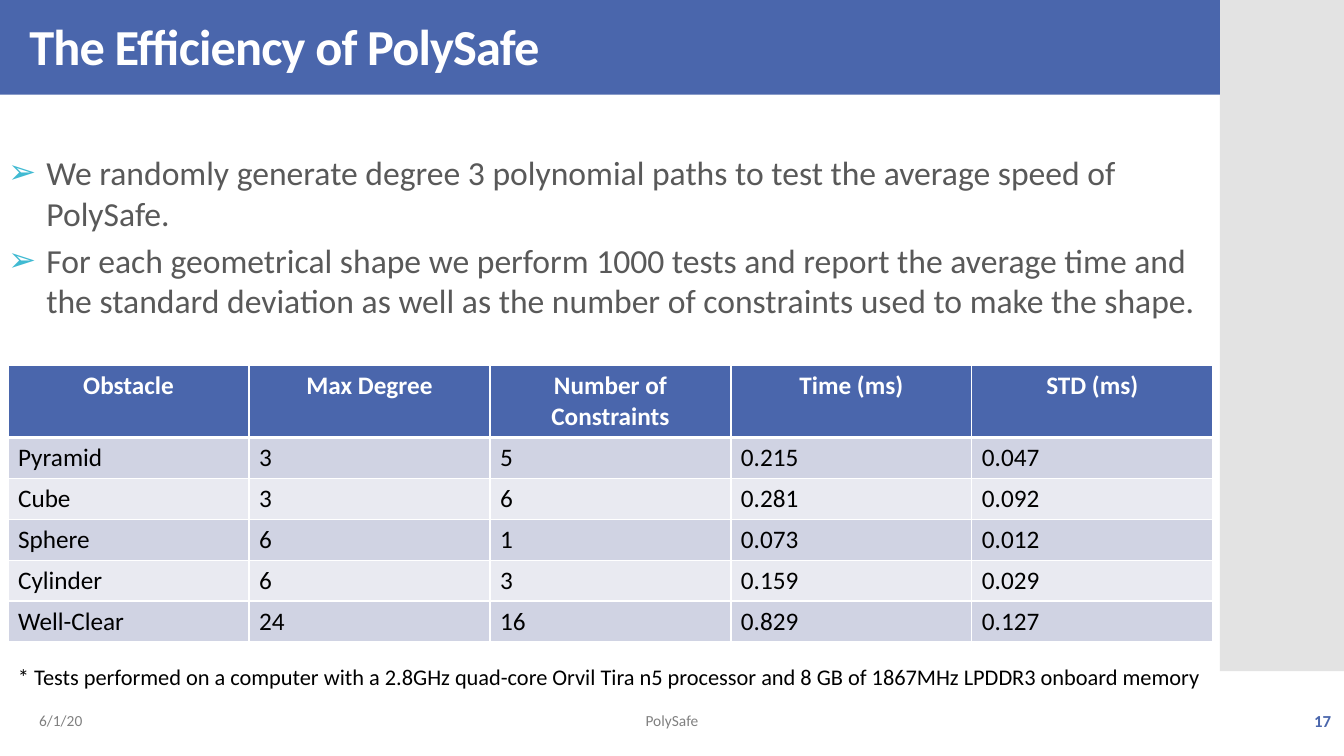
from dataclasses import dataclass

from lxml.etree import SubElement
from pptx import Presentation
from pptx.dml.color import RGBColor
from pptx.enum.shapes import MSO_SHAPE
from pptx.enum.text import MSO_ANCHOR, MSO_AUTO_SIZE, PP_ALIGN
from pptx.oxml.ns import qn
from pptx.slide import Slide
from pptx.text.text import Font, TextFrame
from pptx.util import Inches, Pt

BLUE = RGBColor(0x4A, 0x66, 0xAC)
CYAN = RGBColor(0x40, 0xBA, 0xD2)
WHITE = RGBColor(0xFF, 0xFF, 0xFF)
BLACK = RGBColor(0, 0, 0)
DARK_GREY = RGBColor(0x59, 0x59, 0x59)
GREY = RGBColor(0x80, 0x80, 0x80)
SIDE_GREY = RGBColor(0xC8, 0xC8, 0xC8)
ROW_DARK = RGBColor(0xD0, 0xD3, 0xE3)
ROW_LIGHT = RGBColor(0xE9, 0xEA, 0xF1)


@dataclass(frozen=True)
class Box:
    left: float
    top: float
    width: float
    height: float

    def emu(self) -> tuple:
        return tuple(Inches(v) for v in (self.left, self.top, self.width, self.height))


@dataclass(frozen=True)
class Panel:
    box: Box
    color: RGBColor
    opacity: int = 100


@dataclass(frozen=True)
class Label:
    text: str
    box: Box
    size: int
    color: RGBColor
    align: PP_ALIGN = PP_ALIGN.LEFT
    anchor: MSO_ANCHOR = MSO_ANCHOR.MIDDLE
    bold: bool = False


PANELS = [
    Panel(Box(-0.01, 0, 12.11, 0.94), BLUE),
    Panel(Box(12.1, 0, 1.24, 6.66), SIDE_GREY, 50),
]
BULLETS = [
    "We randomly generate degree 3 polynomial paths to test the average speed of PolySafe.",
    "For each geometrical shape we perform 1000 tests and report the average time and "
    "the standard deviation as well as the number of constraints used to make the shape.",
]
RESULTS = [
    ("Obstacle", "Max Degree", "Number of Constraints", "Time (ms)", "STD (ms)"),
    ("Pyramid", "3", "5", "0.215", "0.047"),
    ("Cube", "3", "6", "0.281", "0.092"),
    ("Sphere", "6", "1", "0.073", "0.012"),
    ("Cylinder", "6", "3", "0.159", "0.029"),
    ("Well-Clear", "24", "16", "0.829", "0.127"),
]
LABELS = [
    Label("6/1/20", Box(0.29, 6.95, 3, 0.4), 11, GREY),
    Label("PolySafe", Box(4.16, 6.95, 5.01, 0.4), 11, GREY, PP_ALIGN.CENTER),
    Label("17", Box(11.63, 6.95, 1.67, 0.4), 12, BLUE, PP_ALIGN.RIGHT, bold=True),
    Label("* Tests performed on a computer with a 2.8GHz quad-core Orvil Tira n5 processor "
          "and 8 GB of 1867MHz LPDDR3 onboard memory",
          Box(0.08, 6.53, 12.13, 0.67), 16, BLACK, anchor=MSO_ANCHOR.TOP),
]


def style_font(font: Font, size: float, color: RGBColor, bold: bool = False) -> None:
    font.name = "Calibri"
    font.size = Pt(size)
    font.bold = bold
    font.color.rgb = color


def prepare_placeholder(sp, box: Box) -> TextFrame:
    """Move a placeholder and give its frame the slide's insets and anchor."""
    sp.left, sp.top, sp.width, sp.height = box.emu()
    tf = sp.text_frame
    tf.auto_size = MSO_AUTO_SIZE.NONE
    tf.vertical_anchor = MSO_ANCHOR.MIDDLE
    tf.margin_left = 0
    return tf


def add_panel(slide: Slide, panel: Panel) -> None:
    """Add a flat rectangle behind everything else."""
    sp = slide.shapes.add_shape(MSO_SHAPE.RECTANGLE, *panel.box.emu())
    sp.shadow.inherit = False
    sp.fill.solid()
    sp.fill.fore_color.rgb = panel.color
    sp.line.fill.background()
    if panel.opacity < 100:
        color = sp._element.spPr.find(qn("a:solidFill"))[0]
        SubElement(color, qn("a:alpha"), val=str(panel.opacity * 1000))
    slide.shapes._spTree.insert(2, sp._element)


def fill_title(slide: Slide) -> None:
    tf = prepare_placeholder(slide.shapes.title, Box(0.29, 0.15, 11.74, 0.68))
    tf.text = "The Efficiency of PolySafe"
    p = tf.paragraphs[0]
    p.alignment = PP_ALIGN.LEFT
    p.line_spacing = 0.9
    r = p.runs[0]
    style_font(r.font, 36, WHITE, bold=True)
    r._r.get_or_add_rPr().set("spc", "-60")


def fill_bullets(slide: Slide) -> None:
    tf = prepare_placeholder(slide.placeholders[1], Box(0.08, 1.05, 11.94, 2.59))
    tf.text = "\n".join(BULLETS)
    for i, p in enumerate(tf.paragraphs):
        pPr = p._p.get_or_add_pPr()
        pPr.set("marL", str(Inches(0.38)))
        pPr.set("indent", str(-Inches(0.38)))
        SubElement(SubElement(pPr, qn("a:buClr")), qn("a:srgbClr"), val=str(CYAN))
        SubElement(pPr, qn("a:buFont"), typeface="Calibri")
        SubElement(pPr, qn("a:buChar"), char="➢")
        p.space_before = Pt(2.5 if i else 0)
        p.space_after = Pt(2.5)
        style_font(p.runs[0].font, 24, DARK_GREY)


def add_border(cell, side: str, width: float) -> None:
    """Draw a white border on one side; call before the cell is filled."""
    ln = SubElement(cell._tc.get_or_add_tcPr(), qn(f"a:{side}"), w=str(Pt(width)))
    SubElement(SubElement(ln, qn("a:solidFill")), qn("a:srgbClr"), val=str(WHITE))


def add_results(slide: Slide) -> None:
    frame = slide.shapes.add_table(len(RESULTS), len(RESULTS[0]),
                                   *Box(0.08, 3.63, 11.95, 2.7).emu())
    table = frame.table
    for column in table.columns:
        column.width = Inches(2.39)
    for i, (row, values) in enumerate(zip(table.rows, RESULTS)):
        header = i == 0
        row.height = Inches(0.7 if header else 0.4)
        for cell, value in zip(row.cells, values):
            for side in ("lnL", "lnR"):
                add_border(cell, side, 1)
            add_border(cell, "lnT", 3 if i == 1 else 1)
            add_border(cell, "lnB", 3 if header else 1)
            cell.fill.solid()
            cell.fill.fore_color.rgb = BLUE if header else ROW_DARK if i % 2 else ROW_LIGHT
            cell.text = value
            p = cell.text_frame.paragraphs[0]
            p.alignment = PP_ALIGN.CENTER if header else PP_ALIGN.LEFT
            style_font(p.runs[0].font, 18, WHITE if header else BLACK, header)


def add_label(slide: Slide, label: Label) -> None:
    tf = slide.shapes.add_textbox(*label.box.emu()).text_frame
    tf.word_wrap = True
    tf.vertical_anchor = label.anchor
    tf.text = label.text
    p = tf.paragraphs[0]
    p.alignment = label.align
    style_font(p.runs[0].font, label.size, label.color, label.bold)


def main() -> None:
    prs = Presentation()
    prs.slide_width, prs.slide_height = Inches(13.33), Inches(7.5)
    slide = prs.slides.add_slide(prs.slide_layouts[1])
    for panel in PANELS:
        add_panel(slide, panel)
    fill_title(slide)
    fill_bullets(slide)
    add_results(slide)
    for label in LABELS:
        add_label(slide, label)
    prs.save("out.pptx")


if __name__ == "__main__":
    main()
